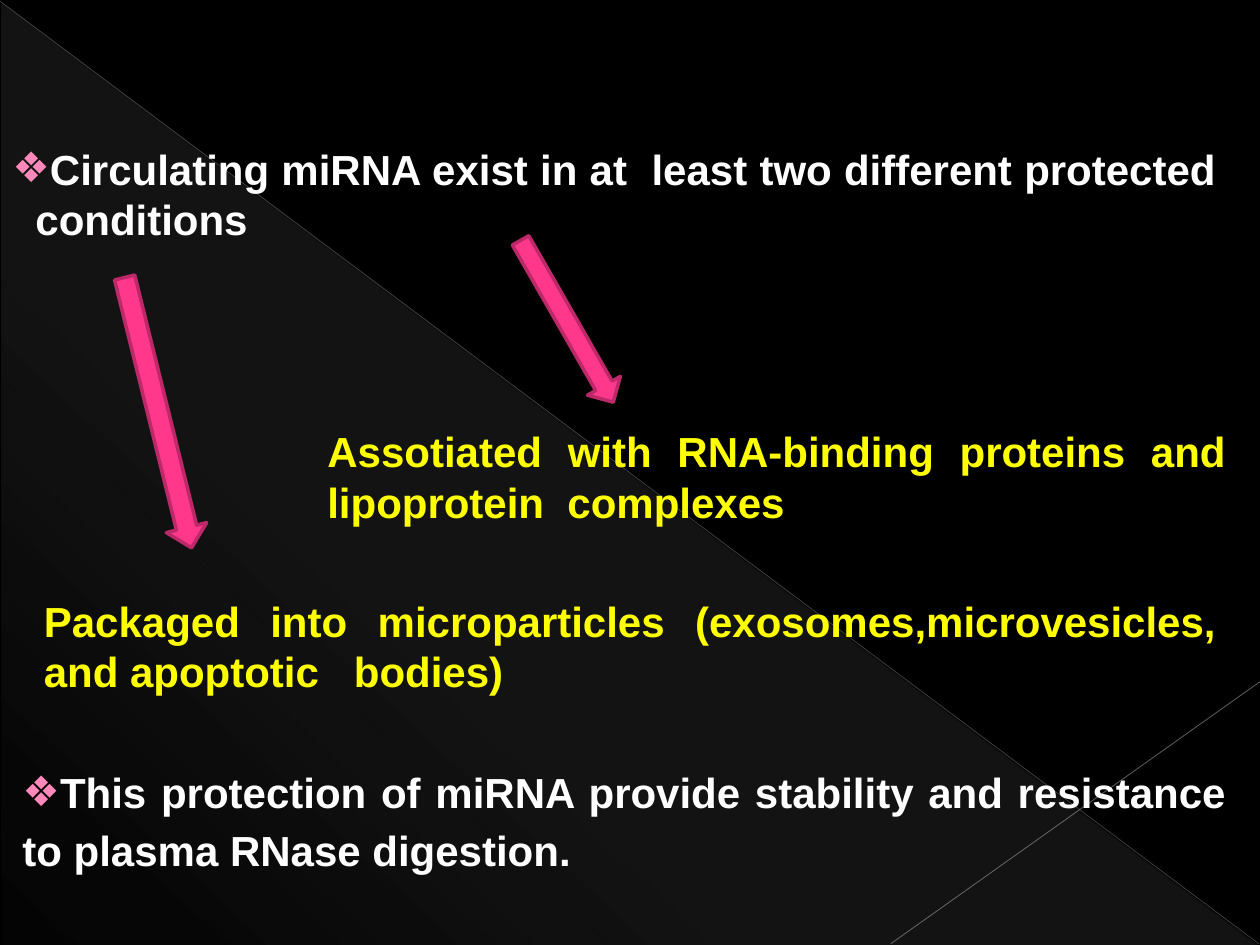
import dataclasses
import typing

import pptx
import pptx.dml.color
import pptx.enum.shapes
import pptx.enum.text
import pptx.oxml
import pptx.oxml.ns
import pptx.util

Inches = pptx.util.Inches
Pt = pptx.util.Pt
RGBColor = pptx.dml.color.RGBColor
Shape = pptx.enum.shapes.MSO_SHAPE
Align = pptx.enum.text.PP_ALIGN
Anchor = pptx.enum.text.MSO_ANCHOR

BLACK = RGBColor(0x00, 0x00, 0x00)
WHITE = RGBColor(0xFF, 0xFF, 0xFF)
YELLOW = RGBColor(0xFF, 0xFF, 0x00)
PINK = RGBColor(0xFF, 0x38, 0x8C)
ROSE = RGBColor(0xBD, 0x29, 0x68)
BLUSH = RGBColor(0xFF, 0x88, 0xBA)
PALE = RGBColor(0xD2, 0xD2, 0xD2)
GREY = RGBColor(0xBF, 0xBF, 0xBF)
SILVER = RGBColor(0xC6, 0xC6, 0xC6)

Box = tuple[float, float, float, float]


@dataclasses.dataclass
class Run:
    text: str
    size: float = 24


@dataclasses.dataclass
class Note:
    box: Box
    runs: list[Run]
    color: RGBColor
    anchor: typing.Any = Anchor.MIDDLE
    bullet: bool = False
    hang: float = 0


@dataclasses.dataclass
class Arrow:
    box: Box
    turn: float


@dataclasses.dataclass
class Rule:
    ends: Box
    color: RGBColor
    width: float
    alpha: int


NOTES = [
    Note((0, 1.08, 9.75, 0.91),
         [Run("Circulating miRNA exist in at  least two different protected  conditions")],
         WHITE, bullet=True, hang=0.09),
    Note((2.5, 3.33, 7.33, 0.91),
         [Run("Assotiated with RNA-binding proteins and lipoprotein  complexes ")],
         YELLOW, anchor=Anchor.TOP),
    Note((0.25, 4.67, 9.5, 0.91),
         [Run("Packaged into microparticles (exosomes,microvesicles, and apoptotic   bodies)")],
         YELLOW),
    Note((0.08, 6.03, 9.75, 0.98),
         [Run("This protection of miRNA provide stability and resistance "
              "to plasma RNase digestion."), Run("\t", 28)],
         WHITE, bullet=True),
]
ARROWS = [Arrow((1.09, 2.17, 0.33, 2.21), 346.1),
          Arrow((4.35, 1.81, 0.3, 1.48), 330.2)]
RULES = [Rule((0, 0.01, 9.99, 7.49), GREY, 0.39, 35),
         Rule((10, 5.41, 7.07, 7.49), SILVER, 0.47, 45)]
STOPS = [(0, 10), (70, 8), (100, 1)]


def node(xml: str) -> typing.Any:
    """Parse one drawing element, given without its prefix."""
    space = pptx.oxml.ns.nsdecls("a")
    name, rest = xml.split(" ", 1)
    return pptx.oxml.parse_xml(f"<a:{name} {space} {rest}")


def draw_wedge(slide: typing.Any) -> None:
    box = (0.01, 0.02, 9.98, 7.48)
    wedge = slide.shapes.add_shape(Shape.RIGHT_TRIANGLE, *map(Inches, box))
    wedge.shadow.inherit = False
    wedge.line.fill.background()
    stops = "".join(
        f'<a:gs pos="{pos * 1000}"><a:srgbClr val="{PALE}">'
        f'<a:alpha val="{alpha * 1000}"/></a:srgbClr></a:gs>'
        for pos, alpha in STOPS)
    grad = node(f'gradFill rotWithShape="1"><a:gsLst>{stops}</a:gsLst>'
                f'<a:lin ang="{133 * 60000}" scaled="0"/></a:gradFill>')
    wedge.fill.background()
    props = wedge.element.spPr
    blank = props.find(pptx.oxml.ns.qn("a:noFill"))
    props.replace(blank, grad)


def draw_rule(slide: typing.Any, rule: Rule) -> None:
    kind = pptx.enum.shapes.MSO_CONNECTOR.STRAIGHT
    line = slide.shapes.add_connector(kind, *map(Inches, rule.ends))
    line.line.width = Pt(rule.width)
    line.line.color.rgb = rule.color
    props = line.element.spPr
    tint = next(props.iter(pptx.oxml.ns.qn("a:srgbClr")))
    tint.append(node(f'alpha val="{rule.alpha * 1000}"/>'))
    props.append(node("effectLst />"))


def draw_note(slide: typing.Any, note: Note) -> None:
    frame = slide.shapes.add_textbox(*map(Inches, note.box)).text_frame
    frame.word_wrap = True
    frame.auto_size = pptx.enum.text.MSO_AUTO_SIZE.SHAPE_TO_FIT_TEXT
    frame.vertical_anchor = note.anchor
    para = frame.paragraphs[0]
    para.alignment = Align.JUSTIFY
    if note.bullet:
        props = para._p.get_or_add_pPr()
        props.set("marL", str(Inches(note.hang)))
        props.set("indent", str(-Inches(note.hang)))
        props.append(node(f'buClr ><a:srgbClr val="{BLUSH}"/></a:buClr>'))
        props.append(node('buFont typeface="Arial"/>'))
        props.append(node('buChar char="❖"/>'))
    for part in note.runs:
        run = para.add_run()
        run.text = part.text
        run.font.name = "Arial"
        run.font.size = Pt(part.size)
        run.font.bold = True
        run.font.color.rgb = note.color


def draw_arrow(slide: typing.Any, arrow: Arrow) -> None:
    shape = slide.shapes.add_shape(Shape.DOWN_ARROW, *map(Inches, arrow.box))
    shape.rotation = arrow.turn
    shape.shadow.inherit = False
    shape.fill.solid()
    shape.fill.fore_color.rgb = PINK
    shape.line.color.rgb = ROSE
    shape.line.width = Pt(2)


def main() -> None:
    deck = pptx.Presentation()
    deck.slide_width, deck.slide_height = Inches(10), Inches(7.5)
    slide = deck.slides.add_slide(deck.slide_layouts[6])

    # Backdrop
    slide.background.fill.solid()
    slide.background.fill.fore_color.rgb = BLACK
    draw_wedge(slide)
    for rule in RULES:
        draw_rule(slide, rule)

    # Statements and the arrows between them
    for note in NOTES:
        draw_note(slide, note)
    for arrow in ARROWS:
        draw_arrow(slide, arrow)

    deck.save("out.pptx")


if __name__ == "__main__":
    main()
